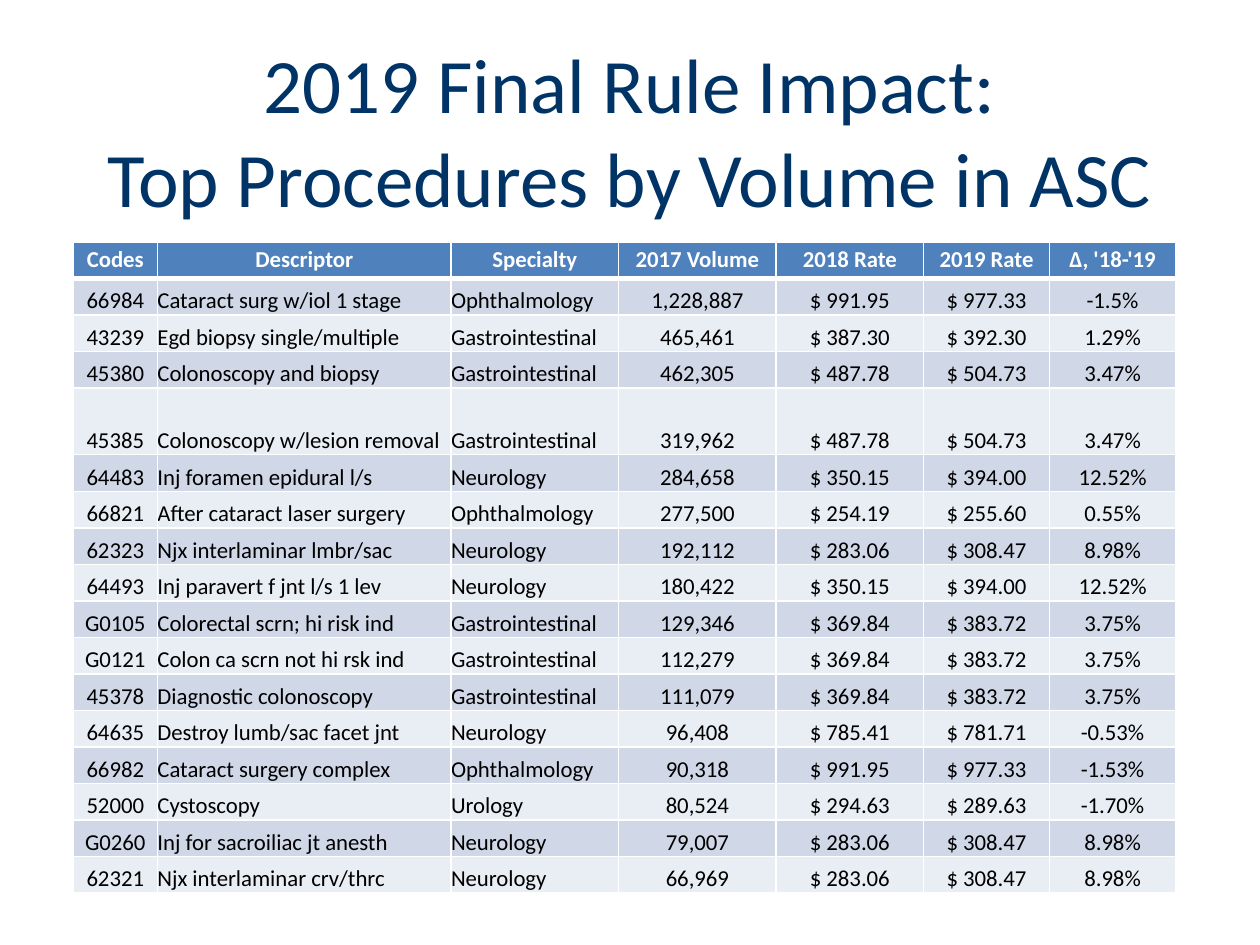
"""Build the slide of top ASC procedures by volume with their 2018 and 2019 rates."""
from lxml import etree
from pptx import Presentation
from pptx import util as u
from pptx.dml.color import RGBColor
from pptx.enum import text
from pptx.oxml import ns

NAVY = RGBColor(0x00, 0x33, 0x66)
BLUE = RGBColor(0x4F, 0x81, 0xBD)
WHITE = RGBColor(0xFF, 0xFF, 0xFF)
BLACK = RGBColor(0x00, 0x00, 0x00)
BANDS = (RGBColor(0xE9, 0xED, 0xF4), RGBColor(0xD0, 0xD8, 0xE8))

FONT = "Calibri"
TITLE = ("2019 Final Rule Impact:", "Top Procedures by Volume in ASC")
COL_WIDTHS = (0.67, 2.33, 1.33, 1.25, 1.17, 1, 1)
LEFT_COLS = (1, 2)
ROW_HEIGHT, TALL_HEIGHT, TALL_ROW = 0.29, 0.53, 4

EYE, GI, NEURO, URO = "Ophthalmology", "Gastrointestinal", "Neurology", "Urology"
HEADER = ("Codes", "Descriptor", "Specialty", "2017 Volume",
          "2018 Rate", "2019 Rate", "∆, '18-'19")
PROCEDURES = (
    ("66984", "Cataract surg w/iol 1 stage", EYE, "1,228,887", "$ 991.95", "$ 977.33", "-1.5%"),
    ("43239", "Egd biopsy single/multiple", GI, "465,461", "$ 387.30", "$ 392.30", "1.29%"),
    ("45380", "Colonoscopy and biopsy", GI, "462,305", "$ 487.78", "$ 504.73", "3.47%"),
    ("45385", "Colonoscopy w/lesion removal", GI, "319,962", "$ 487.78", "$ 504.73", "3.47%"),
    ("64483", "Inj foramen epidural l/s", NEURO, "284,658", "$ 350.15", "$ 394.00", "12.52%"),
    ("66821", "After cataract laser surgery", EYE, "277,500", "$ 254.19", "$ 255.60", "0.55%"),
    ("62323", "Njx interlaminar lmbr/sac", NEURO, "192,112", "$ 283.06", "$ 308.47", "8.98%"),
    ("64493", "Inj paravert f jnt l/s 1 lev", NEURO, "180,422", "$ 350.15", "$ 394.00", "12.52%"),
    ("G0105", "Colorectal scrn; hi risk ind", GI, "129,346", "$ 369.84", "$ 383.72", "3.75%"),
    ("G0121", "Colon ca scrn not hi rsk ind", GI, "112,279", "$ 369.84", "$ 383.72", "3.75%"),
    ("45378", "Diagnostic colonoscopy", GI, "111,079", "$ 369.84", "$ 383.72", "3.75%"),
    ("64635", "Destroy lumb/sac facet jnt", NEURO, "96,408", "$ 785.41", "$ 781.71", "-0.53%"),
    ("66982", "Cataract surgery complex", EYE, "90,318", "$ 991.95", "$ 977.33", "-1.53%"),
    ("52000", "Cystoscopy", URO, "80,524", "$ 294.63", "$ 289.63", "-1.70%"),
    ("G0260", "Inj for sacroiliac jt anesth", NEURO, "79,007", "$ 283.06", "$ 308.47", "8.98%"),
    ("62321", "Njx interlaminar crv/thrc", NEURO, "66,969", "$ 283.06", "$ 308.47", "8.98%"),
)


def style(p, size, color, align, bold=False):
    p.alignment = align
    p.font.name, p.font.size = FONT, u.Pt(size)
    p.font.color.rgb, p.font.bold = color, bold


def add_title(s, lines):
    tf = s.shapes.add_textbox(u.Inches(0.69), u.Inches(0.4),
                              u.Inches(8.62), u.Inches(1.35)).text_frame
    tf.word_wrap = True
    tf.vertical_anchor = text.MSO_ANCHOR.MIDDLE
    tf.text = "\n".join(lines)
    for p in tf.paragraphs:
        p.line_spacing, p.space_after = 0.9, u.Pt(6)
        style(p, 44, NAVY, text.PP_ALIGN.CENTER)


def add_borders(cell, top, bottom):
    tc_pr = cell._tc.get_or_add_tcPr()
    for side, width in (("L", 1), ("R", 1), ("T", top), ("B", bottom)):
        ln = etree.SubElement(tc_pr, ns.qn(f"a:ln{side}"), w=str(u.Pt(width)))
        fill = etree.SubElement(ln, ns.qn("a:solidFill"))
        etree.SubElement(fill, ns.qn("a:srgbClr"), val=str(WHITE))


def fill_cell(cell, value, row, col):
    is_header = row == 0
    add_borders(cell, 3 if row == 1 else 1, 3 if is_header else 1)
    cell.fill.solid()
    cell.fill.fore_color.rgb = BLUE if is_header else BANDS[row % 2]
    cell.margin_left = cell.margin_right = cell.margin_top = cell.margin_bottom = 0
    cell.vertical_anchor = text.MSO_ANCHOR.MIDDLE if is_header else text.MSO_ANCHOR.BOTTOM
    cell.text = value
    is_left = col in LEFT_COLS and not is_header
    style(cell.text_frame.paragraphs[0], 13, WHITE if is_header else BLACK,
          text.PP_ALIGN.LEFT if is_left else text.PP_ALIGN.CENTER, is_header)


def add_rate_table(s, rows):
    heights = [TALL_HEIGHT if i == TALL_ROW else ROW_HEIGHT for i in range(len(rows))]
    table = s.shapes.add_table(len(rows), len(COL_WIDTHS), u.Inches(0.58), u.Inches(1.92),
                               u.Inches(sum(COL_WIDTHS)), u.Inches(sum(heights))).table
    for column, width in zip(table.columns, COL_WIDTHS):
        column.width = u.Inches(width)
    for i, values in enumerate(rows):
        table.rows[i].height = u.Inches(heights[i])
        for j, value in enumerate(values):
            fill_cell(table.cell(i, j), value, i, j)


def main():
    prs = Presentation()
    prs.slide_width, prs.slide_height = u.Inches(10), u.Inches(7.5)
    s = prs.slides.add_slide(prs.slide_layouts[6])
    add_title(s, TITLE)
    add_rate_table(s, (HEADER,) + PROCEDURES)
    prs.save("out.pptx")


if __name__ == "__main__":
    main()
